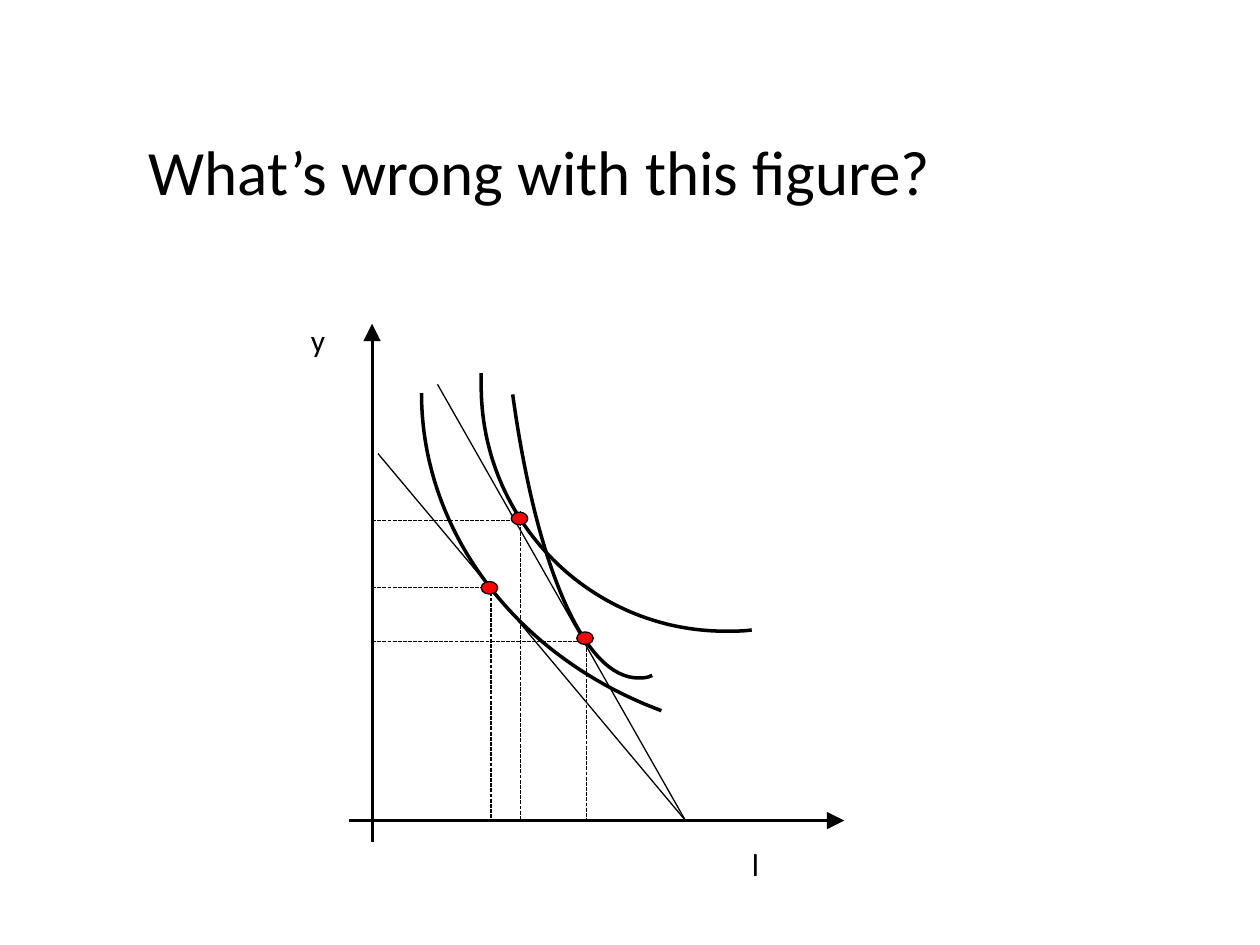
import copy

import pptx
import pptx.util
import pptx.dml.color
import pptx.enum.dml
import pptx.enum.shapes
import pptx.enum.text
import pptx.oxml.ns

Pt = pptx.util.Pt
RGB = pptx.dml.color.RGBColor.from_string
qn = pptx.oxml.ns.qn

THEME = {
    "font": "Calibri", "title": 36, "label": 18,
    "ink": "000000", "dot": "FF0000",
    "thin": 0.75, "axis": 1.75, "curve": 2,
}

TITLE = ("What’s wrong with this figure?", (77.8, 72, 465.8, 51))
LABELS = [("y", (170.6, 180, 23, 29)), ("l", (422.6, 479.5, 19, 29))]

ORIGIN_X, ORIGIN_Y = 212.6, 468.9
AXES = [((ORIGIN_X, 481), (ORIGIN_X, 185)),
        ((199.2, ORIGIN_Y), (482.4, ORIGIN_Y))]
ENDOWMENT = (391.7, ORIGIN_Y)
BUDGET_STARTS = [(216, 259.2), (250, 219.6)]

# Level guide (y, right end), upright guide (x, top), dot centre
TANGENCIES = [
    ((297.4, 292.3), (297.5, 292.3), (296.9, 296.3)),
    ((335.7, 280.8), (280.6, 332.6), (279.7, 335.9)),
    ((366.5, 337.7), (335.2, 367.2), (334.3, 364.7)),
]
DOT_SIZE = (9.4, 7.2)

# Control points of the joined cubic segments, then the pivot of the sector
INDIFFERENCE_CURVES = [
    ([(378, 406.1), (294.5, 375.1), (240.9, 303.1), (240.9, 224.6)],
     (468.7, 224.6)),
    ([(372.7, 385.9), (370.1, 387.4), (367.2, 387.4), (364.8, 387.4),
      (334.1, 387.4), (306.7, 324.7), (293, 225.4)],
     (364.8, 100.8)),
    ([(429.6, 360), (424.8, 360.7), (419.8, 360.7), (414.7, 360.7),
      (337.7, 360.7), (275, 298.1), (275, 220.3),
      (275, 218.2), (275, 216), (275, 213.3)],
     (414.7, 220.3)),
]


def set_line(line, width, dashed=False):
    line.color.rgb = RGB(THEME["ink"])
    line.width = Pt(width)
    if dashed:
        line.dash_style = pptx.enum.dml.MSO_LINE.SQUARE_DOT


def append_tag(parent, tag, **attributes):
    child = parent.makeelement(qn(tag), attributes)
    parent.append(child)
    return child


def add_line(s, start, end, width, dashed=False, arrow=False):
    c = s.shapes.add_connector(pptx.enum.shapes.MSO_CONNECTOR.STRAIGHT,
                               *map(Pt, start + end))
    set_line(c.line, width, dashed)
    sp_pr = c._element.spPr
    if arrow:
        append_tag(sp_pr.find(qn("a:ln")), "a:tailEnd",
                   type="triangle", w="lg", len="lg")
    append_tag(sp_pr, "a:effectLst")


def write(sp, text, size):
    tf = sp.text_frame
    tf.word_wrap = False
    tf.auto_size = pptx.enum.text.MSO_AUTO_SIZE.SHAPE_TO_FIT_TEXT
    tf.vertical_anchor = pptx.enum.text.MSO_ANCHOR.TOP
    p = tf.paragraphs[0]
    p.alignment = pptx.enum.text.PP_ALIGN.LEFT
    r = p.add_run()
    r.text = text
    r.font.name = THEME["font"]
    r.font.size = Pt(size)
    r.font.color.rgb = RGB(THEME["ink"])


def add_curve(s, points, pivot):
    """Draw an open cubic outline and the unstroked sector that it bounds."""
    builder = s.shapes.build_freeform(*map(Pt, points[0]))
    builder.add_line_segments([tuple(map(Pt, pt)) for pt in points[1:] + [pivot]],
                              close=False)
    sp = builder.convert_to_shape()
    sp.shadow.inherit = False
    sp.fill.background()
    set_line(sp.line, THEME["curve"])

    arc = next(sp._element.iter(qn("a:path")))
    *controls, to_pivot = arc.findall(qn("a:lnTo"))
    arc.remove(to_pivot)
    for i in range(0, len(controls), 3):
        segment = append_tag(arc, "a:cubicBezTo")
        for control in controls[i:i + 3]:
            segment.append(control[0])
            arc.remove(control)
    sector = copy.deepcopy(arc)
    sector.append(to_pivot)
    append_tag(sector, "a:close")
    sector.set("stroke", "0")
    arc.set("fill", "none")
    arc.addnext(sector)


def add_dot(s, centre):
    w, h = DOT_SIZE
    sp = s.shapes.add_shape(pptx.enum.shapes.MSO_SHAPE.OVAL,
                            Pt(centre[0] - w / 2), Pt(centre[1] - h / 2),
                            Pt(w), Pt(h))
    sp.shadow.inherit = False
    sp.fill.solid()
    sp.fill.fore_color.rgb = RGB(THEME["dot"])
    set_line(sp.line, THEME["thin"])


def main():
    prs = pptx.Presentation()
    prs.slide_width, prs.slide_height = Pt(720), Pt(540)
    s = prs.slides.add_slide(prs.slide_layouts[5])

    text, box = TITLE
    title = s.shapes.title
    title.left, title.top, title.width, title.height = map(Pt, box)
    write(title, text, THEME["title"])
    for text, box in LABELS:
        write(s.shapes.add_textbox(*map(Pt, box)), text, THEME["label"])

    for start, end in AXES:
        add_line(s, start, end, THEME["axis"], arrow=True)
    for start in BUDGET_STARTS:
        add_line(s, start, ENDOWMENT, THEME["thin"])
    for points, pivot in INDIFFERENCE_CURVES:
        add_curve(s, points, pivot)
    for (y, right), (x, top), centre in TANGENCIES:
        add_line(s, (ORIGIN_X, y), (right, y), THEME["thin"], dashed=True)
        add_line(s, (x, top), (x, ORIGIN_Y), THEME["thin"], dashed=True)
        add_dot(s, centre)

    prs.save("out.pptx")


if __name__ == "__main__":
    main()
